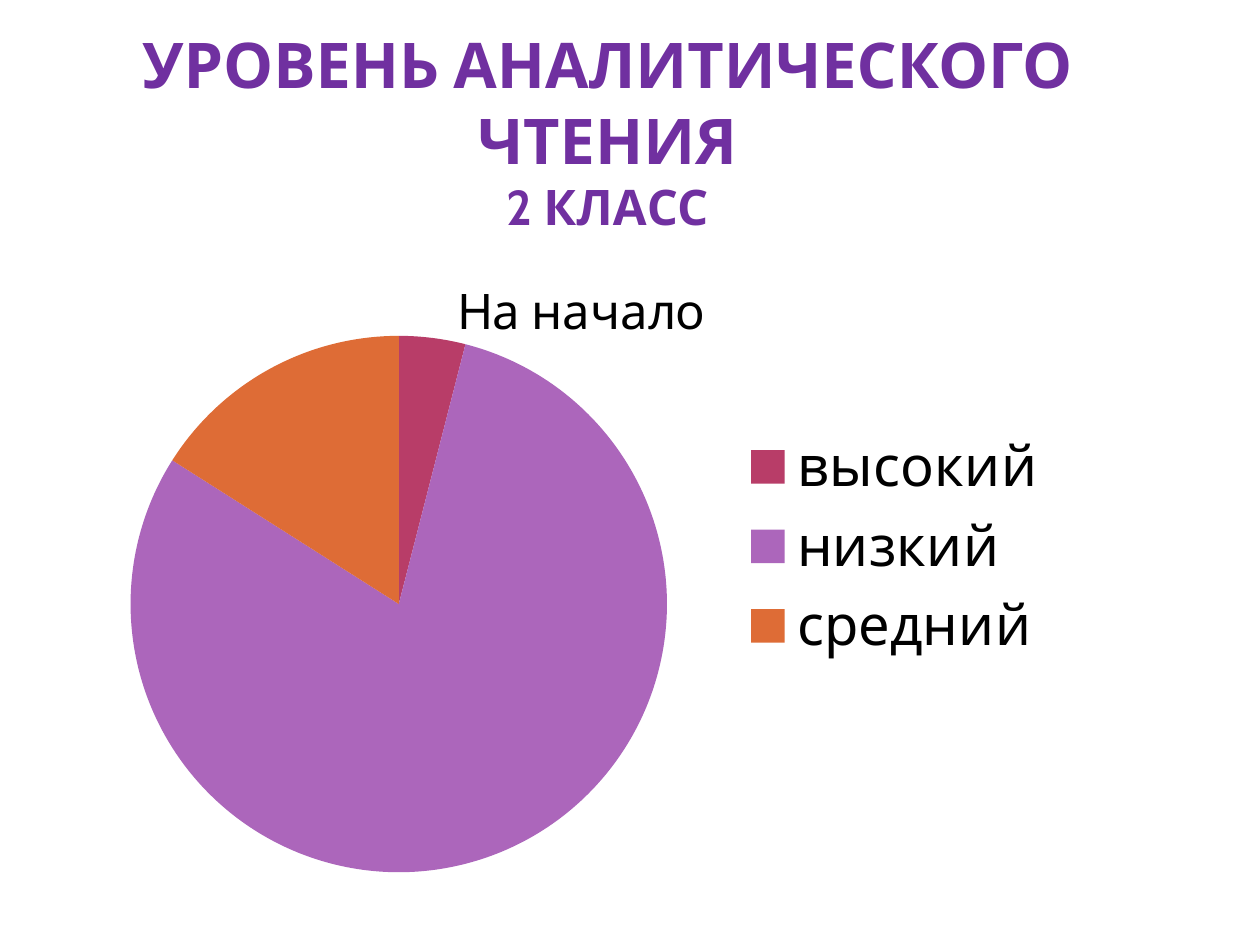
from pptx import Presentation
from pptx.chart.data import CategoryChartData as Data
from pptx.dml.color import RGBColor as RGB
from pptx.enum.chart import XL_CHART_TYPE as Kind, XL_LEGEND_POSITION as Side
from pptx.enum.text import MSO_ANCHOR as Anchor, PP_ALIGN as Align
from pptx.oxml import parse_xml
from pptx.oxml.ns import nsdecls, qn
from pptx.util import Cm, Pt

FONT = "Cabin"
HEX = {
    "head": "7030A0",
    "text": "000000",
    "высокий": "B83D68",
    "низкий": "AC66BB",
    "средний": "DE6C36",
}
LEVELS = {"высокий": 4, "низкий": 80, "средний": 16}


def style(font, size, tint, bold=False):
    """Set the face, size, colour and weight of a font."""
    font.name = FONT
    font.size = Pt(size)
    font.bold = bold
    font.color.rgb = RGB.from_string(HEX[tint])


def place(node, index, **spots):
    """Give a chart part a manual layout in fractions of the chart."""
    for old in node.findall(qn("c:layout")):
        node.remove(old)
    inner = '<c:layoutTarget val="inner"/>' if "w" in spots else ""
    modes = "".join(f'<c:{key}Mode val="edge"/>' for key in "xy")
    sizes = "".join(f'<c:{key} val="{val}"/>' for key, val in spots.items())
    node.insert(index, parse_xml(
        f'<c:layout {nsdecls("c")}><c:manualLayout>'
        f"{inner}{modes}{sizes}</c:manualLayout></c:layout>"))


def add_head(slide):
    """Add the heading with its smaller class line."""
    box = slide.shapes.add_textbox(Cm(1.27), Cm(1.57), Cm(21.95), Cm(3.18))
    frame = box.text_frame
    frame.word_wrap = True
    frame.vertical_anchor = Anchor.BOTTOM
    frame.margin_left = frame.margin_right = Cm(0.13)
    frame.margin_top = frame.margin_bottom = 0
    para = frame.paragraphs[0]
    para.text = "УРОВЕНЬ АНАЛИТИЧЕСКОГО ЧТЕНИЯ\v2 КЛАСС"
    para.alignment = Align.CENTER
    for run, size in zip(para.runs, (36, 28)):
        style(run.font, size, "head", True)


def add_pie(slide):
    """Add the pie of reading levels with its title and legend."""
    data = Data()
    data.categories = list(LEVELS)
    data.add_series("На начало", list(LEVELS.values()))
    chart = slide.shapes.add_chart(
        Kind.PIE, Cm(1.4), Cm(4.17), Cm(20.12), Cm(13.69), data).chart
    style(chart.font, 18, "text")

    chart.has_title = True
    title = chart.chart_title
    para = title.text_frame.paragraphs[0]
    para.text = "На начало"
    style(para.runs[0].font, 28, "text")
    title.include_in_layout = False
    place(title._element, 1, x=0.38, y=0.09)

    chart.has_legend = True
    chart.legend.position = Side.RIGHT
    chart.legend.include_in_layout = False
    style(chart.legend.font, 32, "text")

    plot = chart.plots[0]
    plot.vary_by_categories = True
    for index, name in enumerate(LEVELS):
        fill = plot.series[0].points[index].format.fill
        fill.solid()
        fill.fore_color.rgb = RGB.from_string(HEX[name])
    area = chart._chartSpace.chart.plotArea
    place(area, 0, x=0.06, y=0.19, w=0.54, h=0.79)


def main():
    """Build and save the slide."""
    deck = Presentation()
    deck.slide_width, deck.slide_height = Cm(25.4), Cm(19.05)
    slide = deck.slides.add_slide(deck.slide_layouts[6])
    add_head(slide)
    add_pie(slide)
    deck.save("out.pptx")


if __name__ == "__main__":
    main()
